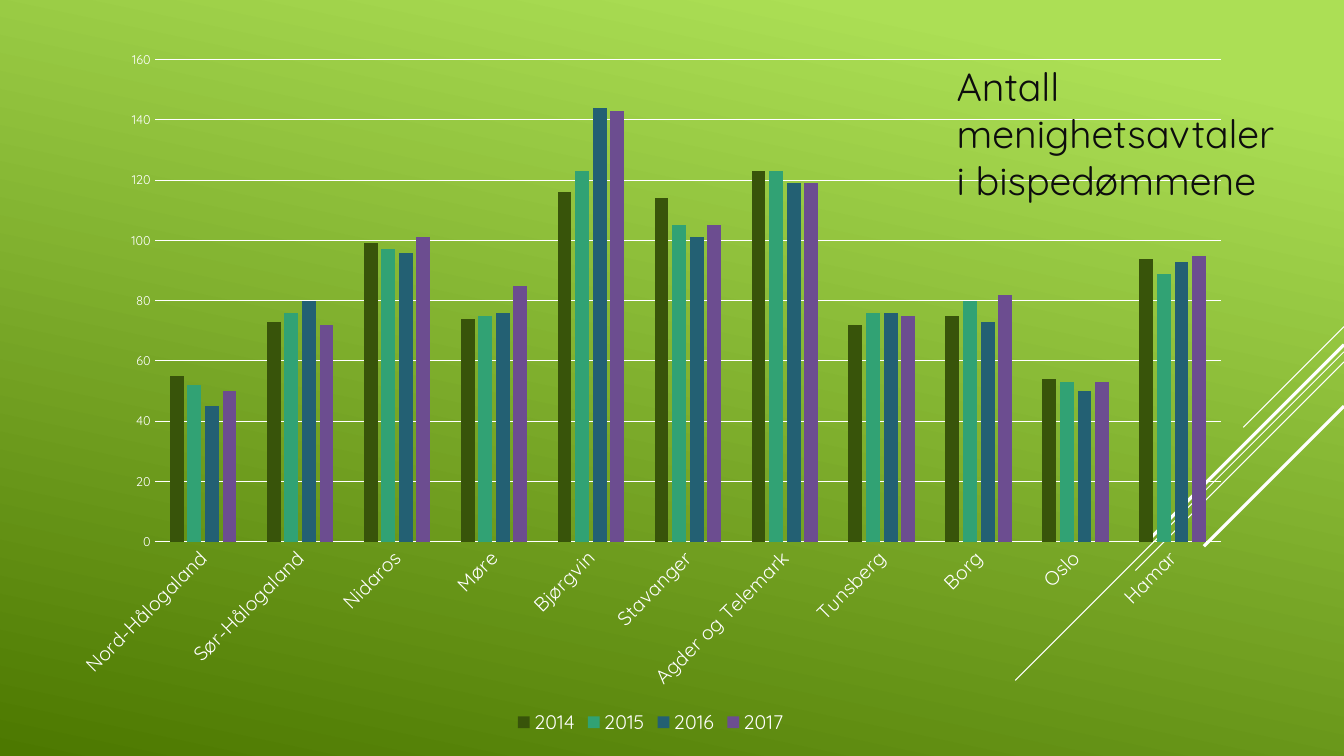
from lxml.etree import SubElement
from pptx import Presentation
from pptx.chart.data import CategoryChartData
from pptx.dml.color import RGBColor
from pptx.enum.chart import XL_CHART_TYPE, XL_LEGEND_POSITION, XL_TICK_MARK
from pptx.enum.shapes import MSO_CONNECTOR
from pptx.enum.text import MSO_AUTO_SIZE
from pptx.oxml import parse_xml
from pptx.oxml.ns import nsdecls, qn
from pptx.util import Inches, Pt

FONT = "Quicksand"
WHITE = "FFFFFF"
SIZE = (13.33, 7.5)
STOPS = [(0.1, "ACDF55"), (1, "4C7800")]
TITLE = ["Antall", "menighetsavtaler", "i bispedømmene"]
STRIPES = [(3.24, 1, 0.75), (3.49, 3.26, 0.75), (3.59, 2.07, 0.75),
           (3.42, 1.91, 2.25), (4.03, 1.39, 2.25)]
AREAS = ["Nord-Hålogaland", "Sør-Hålogaland", "Nidaros", "Møre", "Bjørgvin", "Stavanger",
         "Agder og Telemark", "Tunsberg", "Borg", "Oslo", "Hamar"]
YEARS = [
    ("2014", "38540A", (55, 73, 99, 74, 116, 114, 123, 72, 75, 54, 94)),
    ("2015", "31A274", (52, 76, 97, 75, 123, 105, 123, 76, 80, 53, 89)),
    ("2016", "236073", (45, 80, 96, 76, 144, 101, 119, 76, 73, 50, 93)),
    ("2017", "6C4D90", (50, 72, 101, 85, 143, 105, 119, 75, 82, 53, 95)),
]
PLOT = {"x": 0.079, "y": 0.063, "w": 0.905, "h": 0.665}


def color(code):
    return RGBColor.from_string(code)


def style(font, size, code=WHITE):
    font.name, font.size = FONT, Pt(size)
    font.color.rgb = color(code)


def stroke(line, width=0.75):
    line.color.rgb = color(WHITE)
    line.width = Pt(width)


def paint(slide):
    fill = slide.background.fill
    fill.gradient()
    fill.gradient_angle = 360 - 102
    for stop, (place, code) in zip(fill.gradient_stops, STOPS):
        stop.position = place
        stop.color.rgb = color(code)


def add_stripes(slide):
    right = SIZE[0]
    for top, run, width in STRIPES:
        ends = [Inches(v) for v in (right, top, right - run, top + run)]
        stripe = slide.shapes.add_connector(MSO_CONNECTOR.STRAIGHT, *ends)
        stroke(stripe.line, width)
        SubElement(stripe._element.spPr, qn("a:effectLst"))


def add_bars(slide):
    data = CategoryChartData()
    data.categories = AREAS
    for name, _, vals in YEARS:
        data.add_series(name, vals)
    box = [Inches(v) for v in (0.61, 0.14, 11.69, 7.19)]
    chart = slide.shapes.add_chart(XL_CHART_TYPE.COLUMN_CLUSTERED, *box, data).chart
    style(chart.font, 10)
    chart.has_title = False
    chart.has_legend = True
    legend = chart.legend
    legend.position = XL_LEGEND_POSITION.BOTTOM
    legend.include_in_layout = False
    style(legend.font, 14)

    plot = chart.plots[0]
    plot.gap_width, plot.overlap, plot.vary_by_categories = 219, -27, False
    for series, (_, code, _) in zip(plot.series, YEARS):
        series.format.fill.solid()
        series.format.fill.fore_color.rgb = color(code)

    areas, counts = chart.category_axis, chart.value_axis
    for axis, size in ((areas, 14), (counts, 9)):
        axis.major_tick_mark = axis.minor_tick_mark = XL_TICK_MARK.NONE
        style(axis.tick_labels.font, size)
        body = axis._element.find(qn("c:txPr")).find(qn("a:bodyPr"))
        body.set("rot", "-60000000")
        body.set("vert", "horz")
    stroke(areas.format.line)
    counts.minimum_scale, counts.maximum_scale, counts.major_unit = 0, 160, 20
    counts.format.line.fill.background()
    stroke(counts.major_gridlines.format.line)

    modes = "".join(f'<c:{k}Mode val="edge"/>' for k in "xy")
    sizes = "".join(f'<c:{k} val="{v}"/>' for k, v in PLOT.items())
    area = chart._chartSpace.chart.plotArea
    for old in area.findall(qn("c:layout")):
        area.remove(old)
    area.insert(0, parse_xml(
        f'<c:layout {nsdecls("c")}><c:manualLayout><c:layoutTarget val="inner"/>'
        f'{modes}{sizes}</c:manualLayout></c:layout>'))


def add_title(slide):
    box = [Inches(v) for v in (9.39, 0.57, 3.53, 1.51)]
    frame = slide.shapes.add_textbox(*box).text_frame
    frame.word_wrap = False
    frame.auto_size = MSO_AUTO_SIZE.SHAPE_TO_FIT_TEXT
    frame.text = "\n".join(TITLE)
    for para in frame.paragraphs:
        style(para.font, 28, "0D0D0D")


def main():
    """Build the slide of parish agreements per diocese."""
    deck = Presentation()
    deck.slide_width, deck.slide_height = [Inches(v) for v in SIZE]
    slide = deck.slides.add_slide(deck.slide_layouts[6])
    paint(slide)
    add_stripes(slide)
    add_bars(slide)
    add_title(slide)
    deck.save("out.pptx")


if __name__ == "__main__":
    main()
